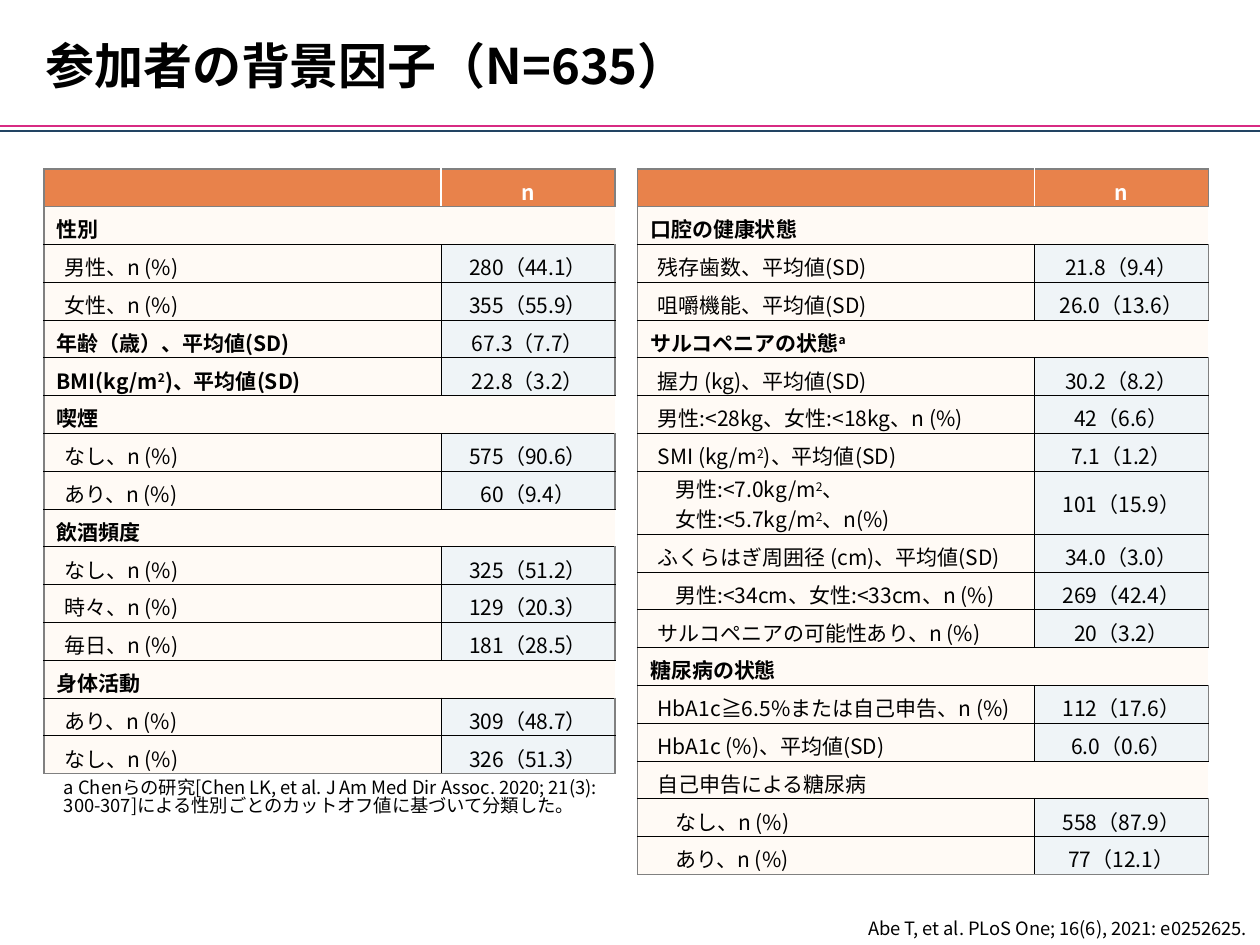
import pptx
import pptx.util
import pptx.dml.color
import pptx.enum.shapes
import pptx.enum.text
import pptx.oxml.ns
from dataclasses import dataclass
from lxml import etree

Inches = pptx.util.Inches
Pt = pptx.util.Pt
RGB = pptx.dml.color.RGBColor.from_string
qn = pptx.oxml.ns.qn
ALIGN = pptx.enum.text.PP_ALIGN
ANCHOR = pptx.enum.text.MSO_ANCHOR


@dataclass
class Theme:
    font: str = "Noto Sans CJK JP"
    text: str = "000000"
    white: str = "FFFFFF"
    header: str = "E8824B"
    label: str = "FFFAF5"
    value: str = "EFF4F7"
    frame: str = "808080"
    pink: str = "D82B83"
    navy: str = "224463"
    title_size: float = 28
    table_size: float = 12
    note_size: float = 10.5


theme = Theme()


def write(p, text, size, color=theme.text, bold=False, align=ALIGN.LEFT):
    """Fill a paragraph; pieces between bars are superscript."""
    p.alignment = align
    p.font.size = Pt(size)
    p.font.bold = bold
    p.font.color.rgb = RGB(color)
    p.font.name = theme.font
    props = p._p.pPr.find(qn("a:defRPr"))
    etree.SubElement(props, qn("a:ea")).set("typeface", theme.font)
    for i, piece in enumerate(text.split("|")):
        if piece:
            r = p.add_run()
            r.text = piece
            if i % 2:
                r.font._element.set("baseline", "30000") if hasattr(r.font, "_element") \
                    else r._r.get_or_add_rPr().set("baseline", "30000")
    if not text:
        p._p.get_or_add_endParaRPr().set("sz", str(int(size * 100)))


def set_borders(cell, **sides):
    """Draw the given sides (L, R, T, B) as (colour, points); None hides one."""
    tc_pr = cell._tc.get_or_add_tcPr()
    for i, side in enumerate("LRTB"):
        ln = etree.Element(qn("a:ln" + side))
        if sides[side]:
            color, width = sides[side]
            ln.set("w", str(Pt(width)))
            fill = etree.SubElement(ln, qn("a:solidFill"))
            etree.SubElement(fill, qn("a:srgbClr")).set("val", color)
        else:
            etree.SubElement(ln, qn("a:noFill"))
        tc_pr.insert(i, ln)


prs = pptx.Presentation()
prs.slide_width, prs.slide_height = Inches(10), Inches(7.5)
s = prs.slides.add_slide(prs.slide_layouts[5])

# Title
sp = s.shapes.title
sp.left, sp.top, sp.width, sp.height = Inches(0.26), Inches(0.23), Inches(5.54), Inches(0.57)
tf = sp.text_frame
tf.word_wrap = False
tf.vertical_anchor = ANCHOR.MIDDLE
write(tf.paragraphs[0], "参加者の背景因子（N=635）", theme.title_size, bold=True)

# Double rule under the title
for y, color in ((1.04, theme.navy), (1, theme.pink)):
    rule = s.shapes.add_connector(pptx.enum.shapes.MSO_CONNECTOR.STRAIGHT,
                                  Inches(0), Inches(y), Inches(10), Inches(y))
    rule.line.color.rgb = RGB(color)
    rule.line.width = Pt(1.5)
    etree.SubElement(rule._element.spPr, qn("a:effectLst"))

# Table rows: indent level, label, value (None spans both columns)
basics = [
    (0, "性別", None),
    (1, "男性、n (%)", "280（44.1）"),
    (1, "女性、n (%)", "355（55.9）"),
    (0, "年齢（歳）、平均値(SD)", "67.3（7.7）"),
    (0, "BMI(kg/m|2|)、平均値(SD)", "22.8（3.2）"),
    (0, "喫煙", None),
    (1, "なし、n (%)", "575（90.6）"),
    (1, "あり、n (%)", "60（9.4）"),
    (0, "飲酒頻度", None),
    (1, "なし、n (%)", "325（51.2）"),
    (1, "時々、n (%)", "129（20.3）"),
    (1, "毎日、n (%)", "181（28.5）"),
    (0, "身体活動", None),
    (1, "あり、n (%)", "309（48.7）"),
    (1, "なし、n (%)", "326（51.3）"),
]
health = [
    (0, "口腔の健康状態", None),
    (1, "残存歯数、平均値(SD)", "21.8（9.4）"),
    (1, "咀嚼機能、平均値(SD)", "26.0（13.6）"),
    (0, "サルコペニアの状態|a|", None),
    (1, "握力 (kg)、平均値(SD)", "30.2（8.2）"),
    (1, "男性:<28kg、女性:<18kg、n (%)", "42（6.6）"),
    (1, "SMI (kg/m|2|)、平均値(SD)", "7.1（1.2）"),
    (2, "男性:<7.0kg/m|2|、\n女性:<5.7kg/m|2|、n(%)", "101（15.9）"),
    (1, "ふくらはぎ周囲径 (cm)、平均値(SD)", "34.0（3.0）"),
    (2, "男性:<34cm、女性:<33cm、n (%)", "269（42.4）"),
    (1, "サルコペニアの可能性あり、n (%)", "20（3.2）"),
    (0, "糖尿病の状態", None),
    (1, "HbA1c≧6.5%または自己申告、n (%)", "112（17.6）"),
    (1, "HbA1c (%)、平均値(SD)", "6.0（0.6）"),
    (1, "自己申告による糖尿病", None),
    (2, "なし、n (%)", "558（87.9）"),
    (2, "あり、n (%)", "77（12.1）"),
]
indents = (0.1, 0.16, 0.3)
row_height, tall_height = 0.3, 0.5
outer, inner, divider = (theme.frame, 1), (theme.text, 0.5), (theme.white, 1)

# Tables
for left, body in ((0.35, basics), (5.06, health)):
    rows = [(0, "", "n")] + body
    table = s.shapes.add_table(len(rows), 2, Inches(left), Inches(1.34),
                               Inches(4.53), Inches(row_height * len(rows))).table
    table.first_row = table.horz_banding = False
    table.columns[0].width, table.columns[1].width = Inches(3.15), Inches(1.38)
    for i, (level, label, value) in enumerate(rows):
        header, spans, tall = i == 0, value is None, "\n" in label
        table.rows[i].height = Inches(tall_height if tall else row_height)
        for j, text in enumerate((label, value or "")):
            cell = table.cell(i, j)
            cell.vertical_anchor = ANCHOR.MIDDLE
            cell.margin_left = Inches(0.1 if j else indents[level])
            cell.margin_right = Inches(0.1 if j else 0.02)
            cell.margin_top = Inches(0.01 if tall else 0.05)
            cell.margin_bottom = Inches(0)
            tf = cell.text_frame
            for k, line in enumerate(text.split("\n")):
                p = tf.add_paragraph() if k else tf.paragraphs[0]
                write(p, line, theme.table_size,
                      color=theme.white if header else theme.text,
                      bold=header or (level == 0 and j == 0),
                      align=ALIGN.CENTER if j else ALIGN.LEFT)
            cell.fill.solid()
            body_fill = theme.value if j and not spans else theme.label
            cell.fill.fore_color.rgb = RGB(theme.header if header else body_fill)
            middle = divider if header else None if spans else inner
            set_borders(cell, L=middle if j else outer, R=outer if j else middle,
                        T=outer if i < 2 else inner,
                        B=outer if i in (0, len(rows) - 1) else inner)
        if spans:
            table.cell(i, 0).merge(table.cell(i, 1))

# Footnote and citation
notes = [
    (0.41, 6.14, 4.53, 0.45, ANCHOR.TOP, ALIGN.LEFT,
     "a Chenらの研究[Chen LK, et al. J Am Med Dir Assoc. 2020; 21(3): 300-307]"
     "による性別ごとのカットオフ値に基づいて分類した。"),
    (5, 7.22, 5, 0.28, ANCHOR.BOTTOM, ALIGN.RIGHT,
     "Abe T, et al. PLoS One; 16(6), 2021: e0252625."),
]
for x, y, w, h, anchor, align, text in notes:
    tf = s.shapes.add_textbox(Inches(x), Inches(y), Inches(w), Inches(h)).text_frame
    tf.word_wrap = True
    tf.vertical_anchor = anchor
    tf.paragraphs[0].line_spacing = 0.83
    write(tf.paragraphs[0], text, theme.note_size, align=align)

prs.save("out.pptx")
